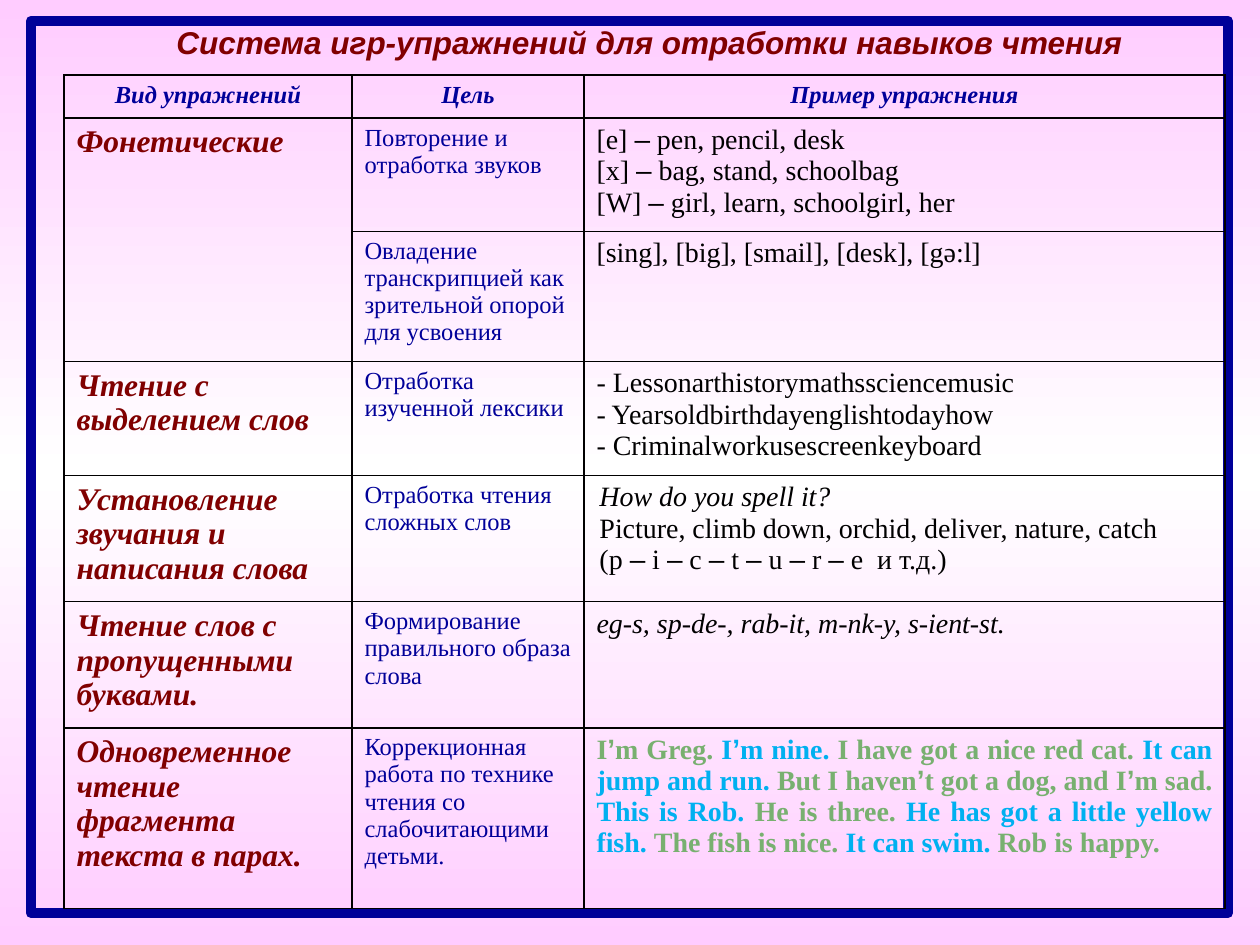
from copy import deepcopy
from itertools import groupby

from lxml.etree import SubElement
from pptx import Presentation
from pptx.dml.color import RGBColor
from pptx.enum.shapes import MSO_SHAPE as Shape
from pptx.enum.text import MSO_ANCHOR as Anchor, MSO_AUTO_SIZE as AutoSize, PP_ALIGN as Align
from pptx.oxml import parse_xml
from pptx.oxml.ns import nsdecls, qn
from pptx.util import Pt

PX = 914400 // 126
COLORS = {"navy": "000099", "maroon": "800000", "black": "000000", "pink": "FFCCFF",
          "white": "FFFFFF", "green": "78B070", "blue": "00B0F0"}

# Text formats by role
TITLE = dict(size=18, bold=True, italic=True, color="maroon", name="Arial")
HEADER = dict(size=14, bold=True, italic=True, color="navy", align=Align.CENTER)
KIND = dict(size=18, bold=True, italic=True, color="maroon")
GOAL = dict(size=14, color="navy")
EXAMPLE = dict(size=16, color="black", align=Align.JUSTIFY)
PLAIN = EXAMPLE | dict(align=Align.LEFT)
ITALIC = EXAMPLE | dict(italic=True)
INDENTED = EXAMPLE | dict(indent=3)
GREEN = EXAMPLE | dict(bold=True, color="green")
BLUE = GREEN | dict(color="blue")


def rgb(color):
    return RGBColor.from_string(COLORS[color])


class Slide:
    """Holds the style and the current slide."""
    font = "Times New Roman"
    symbol_font = "Arial"
    symbols = "–’"

    def __init__(self, prs):
        self.slide = prs.slides.add_slide(prs.slide_layouts[6])

    def background(self, edge, middle):
        fill = self.slide.background.fill
        fill.gradient()
        fill.gradient_angle = 90
        first = fill.gradient_stops[0]._gs
        first.addnext(deepcopy(first))
        for stop, color, position in zip(fill.gradient_stops, (edge, middle, edge), (0, 0.5, 1)):
            stop.color.rgb = rgb(color)
            stop.position = position

    def frame(self, x, y, w, h, color, width):
        border = self.slide.shapes.add_shape(Shape.RECTANGLE, *(v * PX for v in (x, y, w, h)))
        border.shadow.inherit = False
        border.fill.background()
        border.line.color.rgb = rgb(color)
        border.line.width = Pt(width)

    def add_text(self, paragraph, text, style):
        """Add text to a paragraph; dashes and apostrophes get the symbol font."""
        paragraph.alignment = style.get("align", Align.LEFT)
        if "indent" in style:
            p_pr = paragraph._p.get_or_add_pPr()
            p_pr.set("marL", "0")
            p_pr.set("indent", str(style["indent"] * PX))
        for is_symbol, chars in groupby(text, lambda char: char in self.symbols):
            run = paragraph.add_run()
            run.text = "".join(chars)
            values = {"name": self.symbol_font if is_symbol else style.get("name", self.font),
                      "size": Pt(style["size"]),
                      "bold": style.get("bold", False),
                      "italic": style.get("italic", False)}
            for attribute, value in values.items():
                setattr(run.font, attribute, value)
            run.font.color.rgb = rgb(style["color"])

    def title(self, x, y, w, h, text, style):
        heading = self.slide.shapes.add_textbox(*(v * PX for v in (x, y, w, h))).text_frame
        settings = {"word_wrap": False, "auto_size": AutoSize.SHAPE_TO_FIT_TEXT,
                    "vertical_anchor": Anchor.MIDDLE}
        for attribute, value in settings.items():
            setattr(heading, attribute, value)
        self.add_text(heading.paragraphs[0], text, style)

    def cell(self, cell, lines):
        """Each line is a list of (text, style) pieces."""
        cell.fill.background()
        tc_pr = cell._tc.get_or_add_tcPr()
        for index, side in enumerate(("lnL", "lnR", "lnT", "lnB")):
            edge = parse_xml(f'<a:{side} {nsdecls("a")} w="{Pt(1)}"/>')
            solid = SubElement(edge, qn("a:solidFill"))
            SubElement(solid, qn("a:srgbClr"), val=COLORS["black"])
            tc_pr.insert(index, edge)
        frame = cell.text_frame
        for index, pieces in enumerate(lines):
            paragraph = frame.add_paragraph() if index else frame.paragraphs[0]
            for text, style in pieces:
                self.add_text(paragraph, text, style)

    def table(self, x, y, widths, heights, rows):
        size = (sum(widths) * PX, sum(heights) * PX)
        table = self.slide.shapes.add_table(len(heights), len(widths), x * PX, y * PX, *size).table
        table.first_row = table.horz_banding = False
        for column, width in zip(table.columns, widths):
            column.width = width * PX
        for row, height in zip(table.rows, heights):
            row.height = height * PX
        for r, row in enumerate(rows):
            for c, lines in enumerate(row):
                self.cell(table.cell(r, c), lines)
                if not lines:
                    table.cell(r - 1, c).merge(table.cell(r, c))


def same(style, *texts):
    return [[(text, style)] for text in texts]


def exercise(kind, goal, example):
    return [same(KIND, kind) if kind else [], same(GOAL, goal), example]


# Sentences read by two partners in turn
PAIR_READING = [
    ("I’m Greg. ", GREEN), ("I’m nine. ", BLUE),
    ("I have got a nice red cat. ", GREEN), ("It can jump and run. ", BLUE),
    ("But I haven’t got a dog, and I’m sad. ", GREEN), ("This is Rob. ", BLUE),
    ("He is three. ", GREEN), ("He has got a little yellow fish. ", BLUE),
    ("The fish is nice. ", GREEN), ("It can swim. ", BLUE), ("Rob is happy.", GREEN),
]

EXERCISES = [
    [same(HEADER, name) for name in ("Вид упражнений", "Цель", "Пример упражнения")],
    exercise("Фонетические", "Повторение и отработка звуков",
             same(EXAMPLE, "[e] – pen, pencil, desk", "[x] – bag, stand, schoolbag",
                  "[W] – girl, learn, schoolgirl, her")),
    exercise(None, "Овладение транскрипцией как зрительной опорой для усвоения",
             same(PLAIN, "[sing], [big], [smail], [desk], [gә:l]")),
    exercise("Чтение с выделением слов", "Отработка изученной лексики",
             same(EXAMPLE, "- Lessonarthistorymathssciencemusic",
                  "- Yearsoldbirthdayenglishtodayhow", "- Criminalworkusescreenkeyboard")),
    exercise("Установление звучания и написания слова", "Отработка чтения сложных слов",
             same(INDENTED | dict(italic=True), "How do you spell it?")
             + same(INDENTED, "Picture, climb down, orchid, deliver, nature, catch",
                    "(p – i – c – t – u – r – e  и т.д.)")),
    exercise("Чтение слов с пропущенными буквами.", "Формирование правильного образа слова",
             same(ITALIC, "eg-s, sp-de-, rab-it, m-nk-y, s-ient-st.")),
    exercise("Одновременное чтение фрагмента текста в парах.",
             "Коррекционная работа по технике чтения со слабочитающими детьми.",
             [PAIR_READING]),
]


def main():
    prs = Presentation()
    prs.slide_width, prs.slide_height = 1260 * PX, 945 * PX
    slide = Slide(prs)

    # Backdrop and frame
    slide.background("pink", "white")
    slide.frame(31, 21, 1197, 892, "navy", 6)

    # Heading
    slide.title(164, 17, 982, 50, "Система игр-упражнений для отработки навыков чтения", TITLE)

    # Exercises
    slide.table(64, 75, (288, 232, 641), (43, 113, 130, 114, 126, 126, 181), EXERCISES)

    prs.save("out.pptx")


if __name__ == "__main__":
    main()
